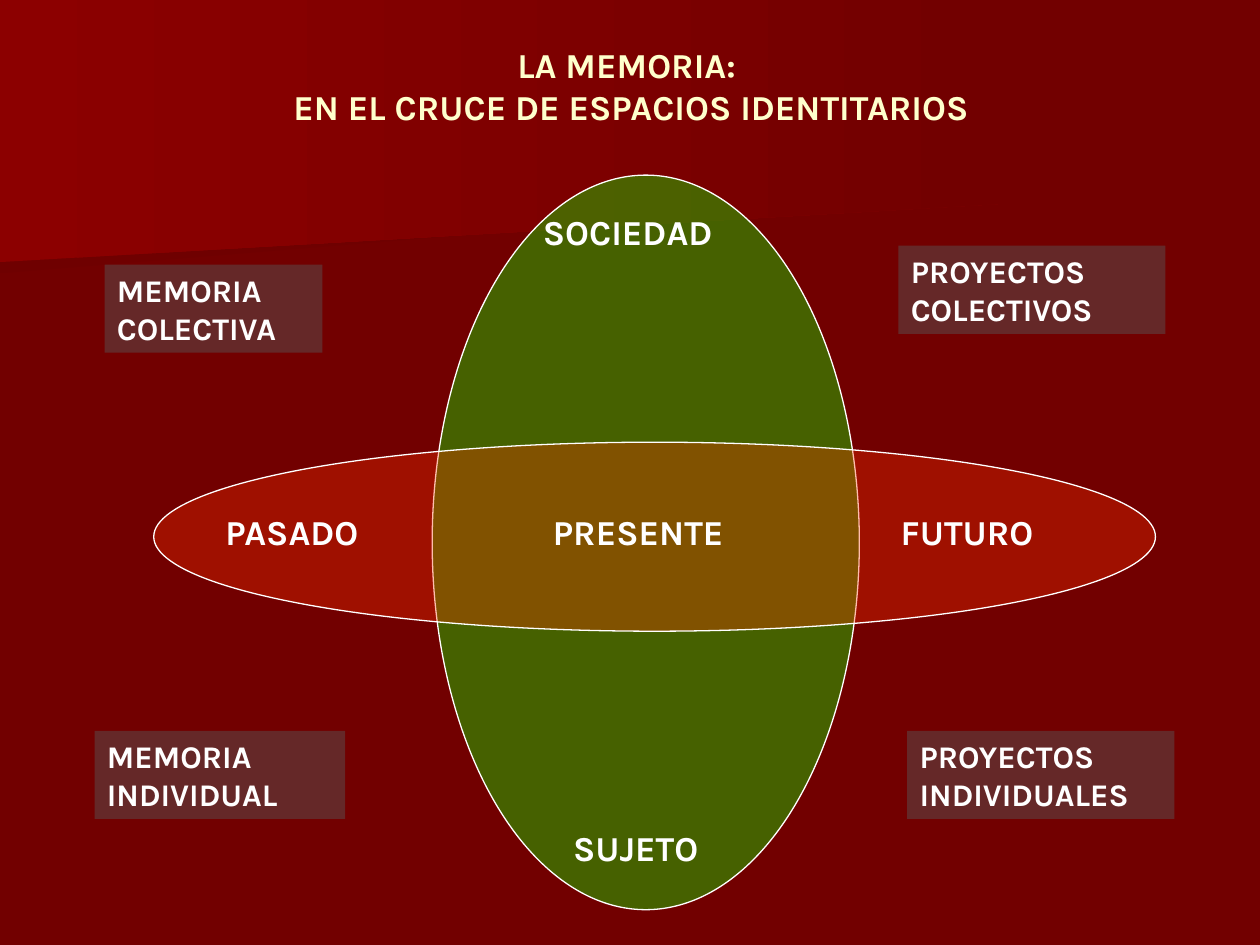
from pptx import Presentation, util as u
from pptx.dml.color import RGBColor
from pptx.enum import shapes, text
from pptx.oxml import parse_xml
from pptx.oxml.ns import nsdecls, qn

Inches = u.Inches
COLORS = {
    "back": "720000", "shade": "6F0000", "glow": "8C0000",
    "green": "00FF00", "red": "FF3300", "teal": "33CCCC",
    "title": "FFFFCC", "white": "FFFFFF",
}


def rgb(name):
    return RGBColor.from_string(COLORS[name])


def write(sp, paragraphs, size, color="white", align=text.PP_ALIGN.LEFT,
          anchor=text.MSO_ANCHOR.TOP):
    """Fill a shape with paragraphs, each a list of lines."""
    tf = sp.text_frame
    tf.word_wrap = True
    tf.vertical_anchor = anchor
    for i, lines in enumerate(paragraphs):
        p = tf.add_paragraph() if i else tf.paragraphs[0]
        p.alignment = align
        for j, line in enumerate(lines):
            if j:
                p.add_line_break()
            r = p.add_run()
            r.text = line
            r.font.name = "Karla"
            r.font.size = u.Pt(size)
            r.font.bold = True
            r.font.color.rgb = rgb(color)


prs = Presentation()
prs.slide_width, prs.slide_height = Inches(10), Inches(7.5)
s = prs.slides.add_slide(prs.slide_layouts[6])
s.background.fill.solid()
s.background.fill.fore_color.rgb = rgb("back")

# Background bands, fading to the right
bands = [
    ("shade", [(7.78, 1.53), (0, 2.17), (0, 1.01), (7.79, 1.01), (7.78, 1.28)]),
    ("glow", [(7.92, 1.62), (0, 2.08), (0, 0), (7.92, 0)]),
]
for color, points in bands:
    points = [(Inches(x), Inches(y)) for x, y in points]
    fb = s.shapes.build_freeform(*points[0])
    fb.add_line_segments(points[1:], close=True)
    sp = fb.convert_to_shape()
    sp.shadow.inherit = False
    sp.line.fill.background()
    sp.fill.gradient()
    sp.fill.gradient_angle = 0
    for stop, name in zip(sp.fill.gradient_stops, (color, "back")):
        stop.color.rgb = rgb(name)

# Translucent shapes: the crossing ellipses, then the corner boxes
OVAL, RECT = shapes.MSO_SHAPE.OVAL, shapes.MSO_SHAPE.RECTANGLE
panels = [
    (OVAL, 3.43, 1.39, 3.39, 5.83, "green", 38, []),
    (OVAL, 1.22, 3.51, 7.95, 1.5, "red", 32, []),
    (RECT, 0.83, 2.1, 1.73, 0.7, "teal", 20, [["MEMORIA COLECTIVA"]]),
    (RECT, 0.75, 5.8, 1.99, 0.7, "teal", 20, [["MEMORIA INDIVIDUAL"]]),
    (RECT, 7.13, 1.95, 2.12, 0.7, "teal", 20, [["PROYECTOS"], ["COLECTIVOS"]]),
    (RECT, 7.2, 5.8, 2.12, 0.7, "teal", 20, [["PROYECTOS"], ["INDIVIDUALES"]]),
]
for kind, x, y, w, h, color, alpha, paragraphs in panels:
    sp = s.shapes.add_shape(kind, Inches(x), Inches(y), Inches(w), Inches(h))
    sp.shadow.inherit = False
    sp.fill.solid()
    sp.fill.fore_color.rgb = rgb(color)
    clr = sp.fill._xPr.find(qn("a:solidFill"))[0]
    clr.append(parse_xml(f'<a:alpha {nsdecls("a")} val="{alpha * 1000}"/>'))
    if kind == OVAL:
        sp.line.color.rgb = rgb("white")
        sp.line.width = u.Pt(0.75)
    else:
        sp.line.fill.background()
        write(sp, paragraphs, 18)

# Title
sp = s.shapes.add_textbox(Inches(0.51), Inches(0.21), Inches(9), Inches(0.94))
write(sp, [["LA MEMORIA: ", "EN EL CRUCE DE ESPACIOS IDENTITARIOS"]], 20,
      "title", text.PP_ALIGN.CENTER, text.MSO_ANCHOR.MIDDLE)

# Labels on the ellipses
labels = [
    ("SOCIEDAD", 4.21, 1.62, 1.97),
    ("SUJETO", 4.45, 6.51, 1.52),
    ("PASADO", 1.69, 4, 1.65),
    ("PRESENTE", 4.29, 4, 1.73),
    ("FUTURO", 7.05, 4, 2.05),
]
for label, x, y, w in labels:
    sp = s.shapes.add_textbox(Inches(x), Inches(y), Inches(w), Inches(0.43))
    write(sp, [[label]], 20)

prs.save("out.pptx")
